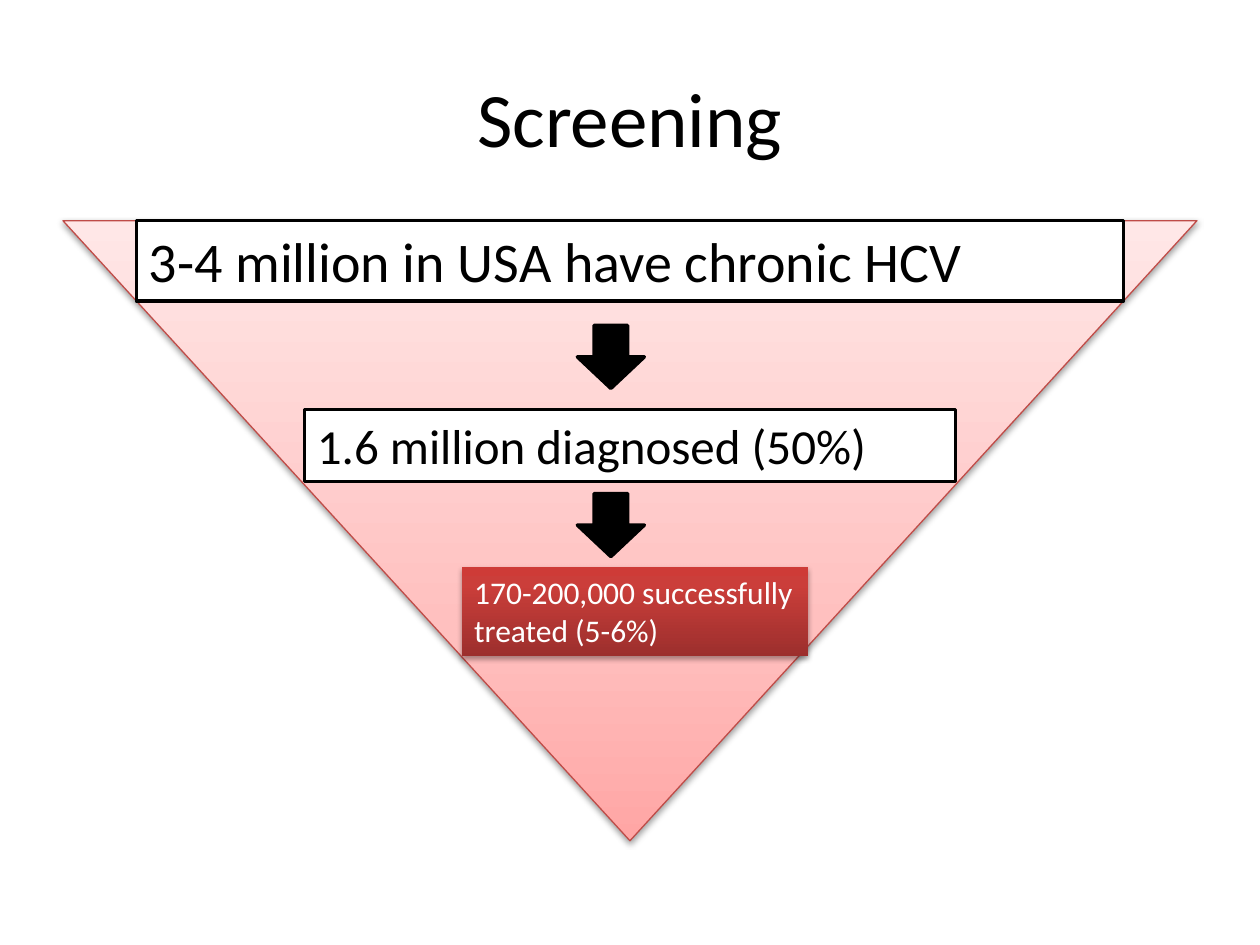
from dataclasses import dataclass

from lxml import etree
from pptx import Presentation
from pptx import util as u
from pptx.dml.color import RGBColor
from pptx.enum import shapes, text
from pptx.oxml.ns import qn

FONT = "Calibri"
BLACK, WHITE = "000000", "FFFFFF"
CENTRE = 12.7
ARROW_LEFT, ARROW_WIDTH, ARROW_HEIGHT = 11.64, 1.35, 1.27


@dataclass(frozen=True)
class Box:
    left: float
    top: float
    width: float
    height: float

    def lengths(self) -> tuple:
        return tuple(u.Cm(value) for value in (self.left, self.top, self.width, self.height))


@dataclass(frozen=True)
class Shadow:
    opacity: int
    blur: float
    distance: float


@dataclass(frozen=True)
class Style:
    """A fill is one colour, or (percent, colour) stops running upwards."""
    fill: str | tuple
    line: str | None = None
    line_width: float = 2
    shadow: Shadow | None = None


@dataclass(frozen=True)
class Stage:
    wording: str
    size: int
    box: Box
    style: Style
    colour: str = BLACK


OUTLINED = Style(WHITE, BLACK)
ARROW = Style(BLACK, BLACK)
FUNNEL = Style(((0, "FFA6A5"), (35, "FFC0BF"), (100, "FFE7E7")),
               "BF4C48", 0.75, Shadow(38, 3.1, 1.6))
TREATED = Style(((0, "9C2F2D"), (80, "CB3E3A"), (100, "CE3B37")),
                shadow=Shadow(35, 3.1, 1.8))

STAGES = (
    Stage("3-4 million in USA have chronic HCV", 32,
          Box(2.75, 4.45, 19.9, 1.62), OUTLINED),
    Stage("1.6 million diagnosed (50%)", 28,
          Box(6.14, 8.26, 13.12, 1.45), OUTLINED),
    Stage("170-200,000 successfully treated (5-6%)", 18,
          Box(9.31, 11.43, 6.99, 1.8), TREATED, WHITE),
)
ARROW_TOPS = (6.56, 9.95)


def rgb(colour: str) -> RGBColor:
    return RGBColor.from_string(colour)


def add_colour(parent, tag: str, colour: str, **attributes: str):
    """Append a DrawingML element that holds one colour; return the colour."""
    element = etree.SubElement(parent, qn(tag), attributes)
    return etree.SubElement(element, qn("a:srgbClr"), val=colour)


def set_fill(shape, fill: str | tuple) -> None:
    if isinstance(fill, str):
        shape.fill.solid()
        shape.fill.fore_color.rgb = rgb(fill)
        return
    shape.fill.gradient()
    shape.fill.gradient_angle = 90
    stops = shape.element.spPr.find(".//" + qn("a:gsLst"))
    for stop in list(stops):
        stops.remove(stop)
    for percent, colour in fill:
        add_colour(stops, "a:gs", colour, pos=str(percent * 1000))


def set_shadow(shape, shadow: Shadow | None) -> None:
    shape.shadow.inherit = False
    if shadow is None:
        return
    effects = shape.element.spPr.find(qn("a:effectLst"))
    colour = add_colour(effects, "a:outerShdw", BLACK,
                        blurRad=str(u.Pt(shadow.blur)), dist=str(u.Pt(shadow.distance)),
                        dir="5400000", rotWithShape="0")
    etree.SubElement(colour, qn("a:alpha"), val=str(shadow.opacity * 1000))


def add_styled_shape(slide, kind: shapes.MSO_SHAPE, box: Box, style: Style):
    shape = slide.shapes.add_shape(kind, *box.lengths())
    set_fill(shape, style.fill)
    if style.line:
        shape.line.color.rgb = rgb(style.line)
        shape.line.width = u.Pt(style.line_width)
    else:
        shape.line.fill.background()
    set_shadow(shape, style.shadow)
    return shape


def write(shape, wording: str, size: int, colour: str,
          alignment: text.PP_ALIGN, anchor: text.MSO_ANCHOR) -> None:
    frame = shape.text_frame
    frame.word_wrap = True
    frame.vertical_anchor = anchor
    paragraph = frame.paragraphs[0]
    paragraph.alignment = alignment
    run = paragraph.add_run()
    run.text = wording
    run.font.name = FONT
    run.font.size = u.Pt(size)
    run.font.color.rgb = rgb(colour)


def add_stage(slide, stage: Stage) -> None:
    shape = add_styled_shape(slide, shapes.MSO_SHAPE.RECTANGLE, stage.box, stage.style)
    write(shape, stage.wording, stage.size, stage.colour,
          text.PP_ALIGN.LEFT, text.MSO_ANCHOR.TOP)
    shape.text_frame.auto_size = text.MSO_AUTO_SIZE.SHAPE_TO_FIT_TEXT


def main() -> None:
    presentation = Presentation()
    presentation.slide_width, presentation.slide_height = u.Cm(2 * CENTRE), u.Cm(19.05)
    slide = presentation.slides.add_slide(presentation.slide_layouts[6])

    title = slide.shapes.add_textbox(*Box(1.27, 0.76, 22.86, 3.18).lengths())
    write(title, "Screening", 44, BLACK, text.PP_ALIGN.CENTER, text.MSO_ANCHOR.MIDDLE)

    add_styled_shape(slide, shapes.MSO_SHAPE.FLOWCHART_MERGE,
                     Box(1.27, 4.45, 22.86, 12.5), FUNNEL)
    for stage in STAGES:
        add_stage(slide, stage)
    for top in ARROW_TOPS:
        add_styled_shape(slide, shapes.MSO_SHAPE.DOWN_ARROW,
                         Box(ARROW_LEFT, top, ARROW_WIDTH, ARROW_HEIGHT), ARROW)

    presentation.save("out.pptx")


if __name__ == "__main__":
    main()
